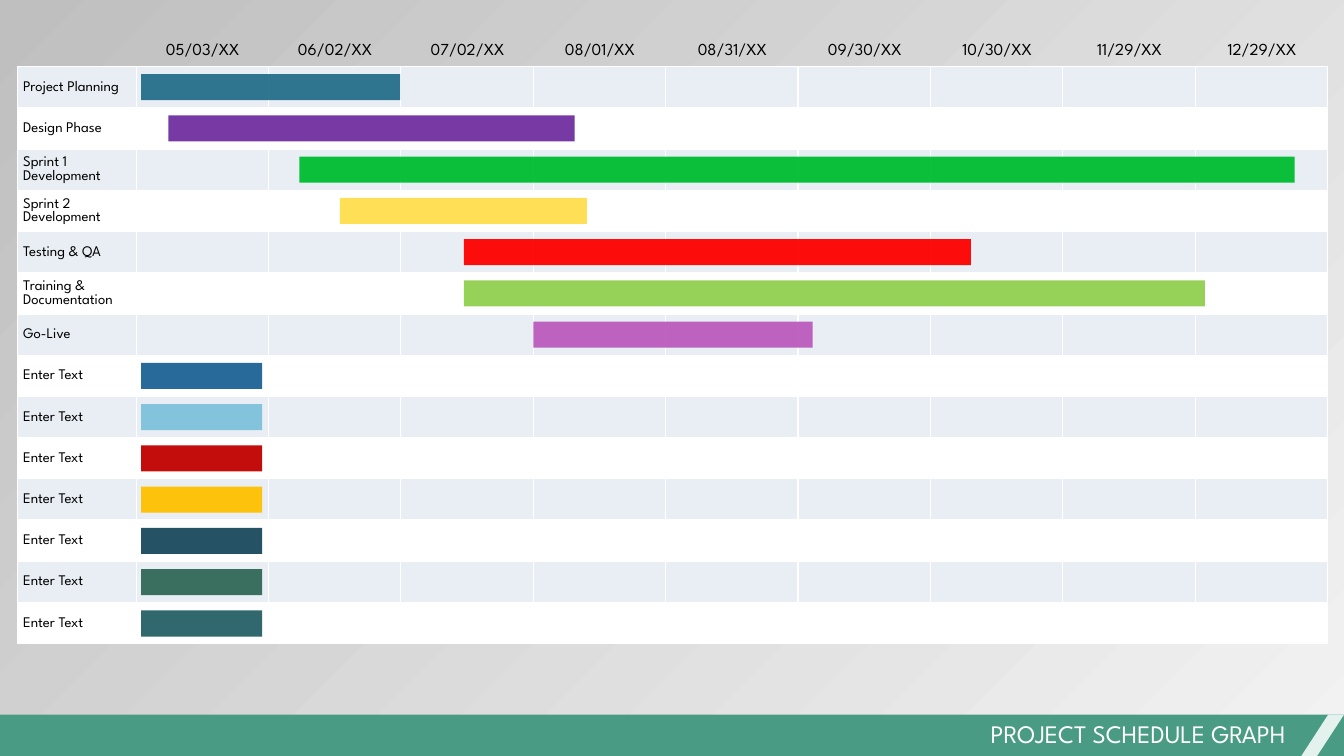
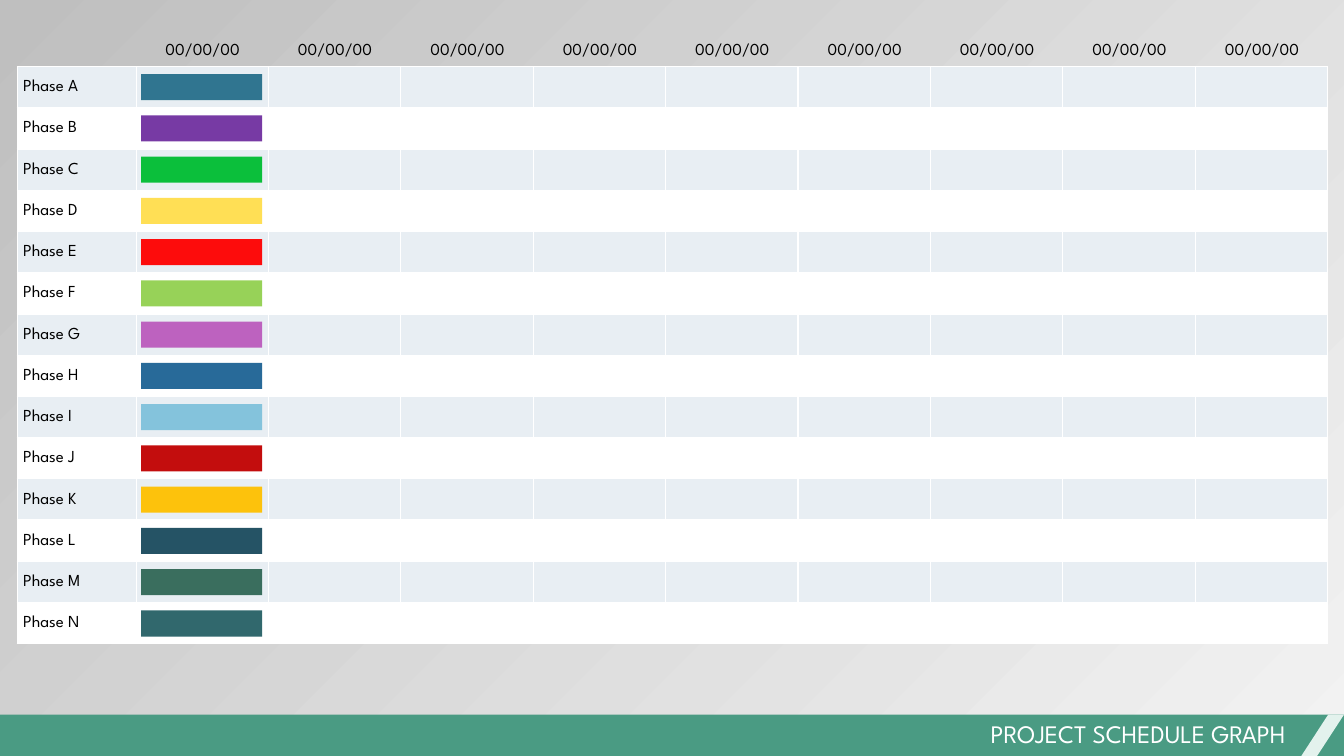
from lxml.etree import SubElement
from pptx import Presentation
from pptx.dml.color import RGBColor
from pptx.enum.shapes import MSO_SHAPE as Shape
from pptx.enum.text import MSO_ANCHOR as Anchor, MSO_AUTO_SIZE as AutoSize, PP_ALIGN as Align
from pptx.oxml.ns import qn
from pptx.util import Inches, Pt

FONT = "League Spartan"
BLACK = RGBColor(0x00, 0x00, 0x00)
WHITE = RGBColor(0xFF, 0xFF, 0xFF)
ROW_TINT = RGBColor(0xE8, 0xEE, 0xF3)
BACK_LIGHT = RGBColor(0xF2, 0xF2, 0xF2)
BACK_DARK = RGBColor(0xBF, 0xBF, 0xBF)
FOOTER_GREEN = RGBColor(0x4A, 0x9B, 0x83)
FOOTER_ACCENT = RGBColor(0xE3, 0xF2, 0xED)
BAR_COLORS = [RGBColor.from_string(code) for code in (
    "276F8B", "7030A0", "00BD32", "FFDE4C", "FF0000", "92D050", "BB5BBD",
    "1D6294", "7FC1DB", "C00000", "FFC000", "1A4A5D", "316857", "266066")]

# Schedule grid, in inches
GRID_LEFT, GRID_TOP, GRID_WIDTH, GRID_HEIGHT = 0.17, 0.66, 13, 5.73
LABEL_WIDTH = 1.18
MONTHS = 9
MONTH_WIDTH = (GRID_WIDTH - LABEL_WIDTH) / MONTHS
ROW_HEIGHT = GRID_HEIGHT / len(BAR_COLORS)
BAR_HEIGHT = 0.26
SHORT_BAR = (1.4, 1.2)
FOOTER_TOP, FOOTER_HEIGHT = 7.09, 0.42

DATES = ["05/03/XX", "06/02/XX", "07/02/XX", "08/01/XX", "08/31/XX",
         "09/30/XX", "10/30/XX", "11/29/XX", "12/29/XX"]
# Task name, (bar left, bar width)
PROJECT_TASKS = [
    ("Project Planning", (1.4, 2.57)),
    ("Design Phase", (1.67, 4.03)),
    ("Sprint 1 Development", (2.97, 9.87)),
    ("Sprint 2 Development", (3.37, 2.45)),
    ("Testing & QA", (4.6, 5.03)),
    ("Training & Documentation", (4.6, 7.35)),
    ("Go-Live", (5.29, 2.77)),
] + [("Enter Text", SHORT_BAR)] * 7
PHASE_TASKS = [(f"Phase {letter}", SHORT_BAR) for letter in "ABCDEFGHIJKLMN"]


def set_alpha(fill_color, percent):
    """Make an RGB colour element partly transparent."""
    SubElement(fill_color, qn("a:alpha"), val=str(percent * 1000))


def set_background(master):
    fill = master.background.fill
    fill.gradient()
    fill.gradient_angle = 135
    light, dark = fill.gradient_stops
    light.color.rgb, dark.color.rgb = BACK_LIGHT, BACK_DARK
    first_color = next(master.background._cSld.iter(qn("a:srgbClr")))
    set_alpha(first_color, 40)


def write(frame, text, size, color=BLACK, align=Align.LEFT):
    paragraph = frame.paragraphs[0]
    paragraph.alignment = align
    run = paragraph.add_run()
    run.text = text
    run.font.name, run.font.size = FONT, Pt(size)
    run.font.color.rgb = color


def add_label(slide, text, box, size, color, align):
    frame = slide.shapes.add_textbox(*map(Inches, box)).text_frame
    frame.word_wrap = True
    frame.auto_size = AutoSize.SHAPE_TO_FIT_TEXT
    write(frame, text, size, color, align)


def add_block(slide, kind, box, color):
    block = slide.shapes.add_shape(kind, *map(Inches, box))
    block.shadow.inherit = False
    block.fill.solid()
    block.fill.fore_color.rgb = color
    block.line.fill.background()
    return block


def style_cell(cell, color):
    margins = {"margin_left": 0.06, "margin_top": 0.01, "margin_right": 0.01, "margin_bottom": 0}
    for side, inches in margins.items():
        setattr(cell, side, Inches(inches))
    cell.vertical_anchor = Anchor.MIDDLE
    properties = cell._tc.get_or_add_tcPr()
    for edge in ("a:lnL", "a:lnR", "a:lnT", "a:lnB"):
        border = SubElement(properties, qn(edge), w=str(Pt(1)))
        SubElement(SubElement(border, qn("a:solidFill")), qn("a:srgbClr"), val=str(WHITE))
    cell.fill.solid()
    cell.fill.fore_color.rgb = color


def add_grid(slide, tasks, label_size):
    box = map(Inches, (GRID_LEFT, GRID_TOP, GRID_WIDTH, GRID_HEIGHT))
    grid = slide.shapes.add_table(len(tasks), MONTHS + 1, *box).table
    grid.first_row = grid.horz_banding = False
    for number, column in enumerate(grid.columns):
        column.width = Inches(MONTH_WIDTH if number else LABEL_WIDTH)
    for number, (row, (name, _)) in enumerate(zip(grid.rows, tasks)):
        row.height = Inches(ROW_HEIGHT)
        for cell in row.cells:
            style_cell(cell, WHITE if number % 2 else ROW_TINT)
        write(row.cells[0].text_frame, name, label_size)


def add_bars(slide, tasks):
    first_top = GRID_TOP + (ROW_HEIGHT - BAR_HEIGHT) / 2
    for number, ((_, (left, width)), color) in enumerate(zip(tasks, BAR_COLORS)):
        top = first_top + number * ROW_HEIGHT
        bar = add_block(slide, Shape.RECTANGLE, (left, top, width, BAR_HEIGHT), color)
        set_alpha(next(bar._element.spPr.iter(qn("a:srgbClr"))), 95)


def add_dates(slide, dates):
    for number, date in enumerate(dates):
        left = GRID_LEFT + LABEL_WIDTH + number * MONTH_WIDTH
        add_label(slide, date, (left, 0.34, 1.32, 0.3), 12, BLACK, Align.CENTER)


def add_footer(slide, title):
    add_block(slide, Shape.RECTANGLE, (0, FOOTER_TOP, 13.33, FOOTER_HEIGHT), FOOTER_GREEN)
    slash = add_block(slide, Shape.PARALLELOGRAM,
                      (12.9, FOOTER_TOP, 0.43, FOOTER_HEIGHT), FOOTER_ACCENT)
    slash.adjustments[0] = 0.65
    add_label(slide, title, (5.25, 7.08, 7.6, 0.4), 18, WHITE, Align.RIGHT)


def add_schedule(deck, dates, tasks, label_size):
    slide = deck.slides.add_slide(deck.slide_layouts[6])
    add_grid(slide, tasks, label_size)
    add_bars(slide, tasks)
    add_dates(slide, dates)
    add_footer(slide, "PROJECT SCHEDULE GRAPH")


def main():
    deck = Presentation()
    deck.slide_width, deck.slide_height = Inches(13.33), Inches(7.5)
    set_background(deck.slide_master)
    add_schedule(deck, DATES, PROJECT_TASKS, 10.5)
    add_schedule(deck, ["00/00/00"] * MONTHS, PHASE_TASKS, 12)
    deck.save("out.pptx")


if __name__ == "__main__":
    main()
